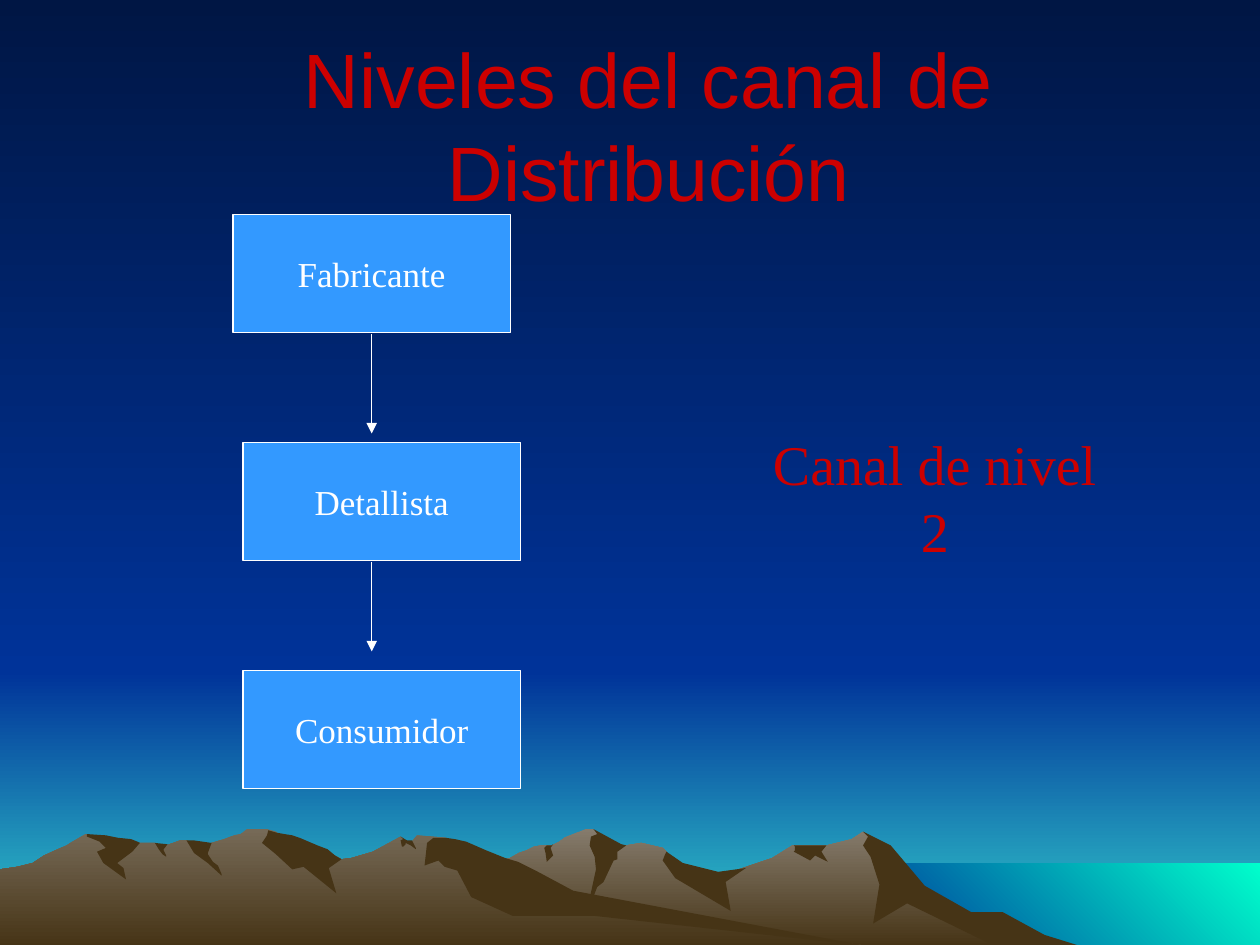
from lxml import etree
from pptx import Presentation
from pptx.dml.color import RGBColor
from pptx.enum.shapes import MSO_CONNECTOR as Connector, MSO_SHAPE as Shape
from pptx.enum.text import MSO_ANCHOR as Anchor, PP_ALIGN as Align
from pptx.oxml.ns import qn
from pptx.util import Inches, Pt

COLORS = {
    "night": "001644",
    "blue": "003399",
    "horizon": "33CCCC",
    "sea": "00FFCC",
    "far_peak": "857B6C",
    "near_peak": "766A57",
    "earth": "463416",
    "box": "3399FF",
    "white": "FFFFFF",
    "red": "CC0000",
}

FAR_RANGE = [
    (802, 82), (778, 69), (764, 65), (723, 40), (702, 13), (685, 2), (676, 8),
    (656, 13), (629, 13), (613, 23), (566, 39), (536, 32), (529, 18), (526, 15),
    (509, 11), (497, 13), (486, 15), (474, 3), (471, 0), (465, 0), (450, 6),
    (448, 7), (444, 10), (438, 13), (430, 13), (424, 14), (418, 17), (412, 19),
    (405, 23), (399, 25), (394, 27), (355, 40), (327, 51), (277, 81), (258, 93),
    (821, 93),
]
NEAR_RANGE = [
    (690, 93), (667, 90), (432, 54), (354, 7), (331, 5), (327, 10), (323, 10),
    (318, 6), (296, 18), (279, 23), (271, 24), (260, 18), (236, 23), (223, 5),
    (219, 2), (212, 0), (196, 0), (191, 4), (186, 5), (178, 8), (168, 11),
    (160, 13), (148, 9), (143, 9), (132, 13), (128, 13), (123, 11), (111, 11),
    (94, 13), (68, 4), (56, 11), (53, 13), (46, 16), (35, 21), (26, 27),
    (14, 30), (0, 32), (0, 93),
]
FAR_SHADOWS = [
    [(796, 66), (771, 66), (734, 45), (707, 13), (685, 2), (689, 6), (685, 13),
     (691, 22), (698, 44), (693, 75), (720, 59), (792, 94), (858, 93), (829, 84)],
    [(471, 0), (474, 4), (469, 6), (468, 13), (472, 22), (473, 32), (465, 69),
     (474, 46), (479, 42), (487, 25), (490, 24), (490, 18), (497, 13), (493, 12)],
    [(529, 18), (528, 20), (526, 25), (536, 39), (580, 65), (576, 42), (592, 31),
     (570, 34), (542, 27)],
    [(650, 13), (630, 13), (631, 14), (631, 17), (630, 18), (643, 25), (647, 21),
     (657, 26), (652, 18), (656, 13)],
    [(433, 19), (432, 15), (434, 13), (438, 13), (439, 12), (437, 15), (439, 21),
     (434, 26)],
]
NEAR_SHADOWS = [
    [(212, 5), (208, 11), (219, 20), (232, 32), (241, 30), (267, 51), (261, 31),
     (271, 24), (266, 21), (260, 16), (252, 13), (245, 10), (238, 7), (232, 5),
     (226, 4), (220, 3), (213, 1)],
    [(370, 10), (361, 8), (354, 7), (344, 7), (339, 11), (337, 29), (348, 25),
     (353, 30), (363, 33), (374, 54), (407, 69), (472, 69), (690, 93), (683, 92),
     (455, 49), (427, 34), (411, 26), (401, 23), (386, 17)],
    [(318, 9), (320, 8), (318, 6), (323, 9), (327, 9), (328, 11), (330, 15),
     (330, 16), (326, 13), (322, 11), (322, 12), (320, 14), (319, 14)],
    [(154, 9), (161, 10), (168, 11), (165, 19), (165, 20), (169, 26), (173, 29),
     (176, 36), (176, 37), (165, 27), (154, 19), (148, 9)],
    [(133, 12), (130, 16), (130, 17), (132, 21), (132, 22), (129, 20), (126, 16),
     (123, 11)],
    [(109, 10), (111, 11), (105, 18), (93, 27), (98, 31), (100, 40), (82, 27),
     (77, 18), (84, 15), (79, 10), (69, 6), (69, 4), (84, 5), (94, 7), (104, 8)],
]


def color(name):
    return RGBColor.from_string(COLORS[name])


def paint(fill, *names, angle=270):
    if len(names) == 1:
        fill.solid()
        fill.fore_color.rgb = color(names[0])
        return
    fill.gradient()
    fill.gradient_angle = angle
    for stop, name in zip(fill.gradient_stops, names):
        stop.color.rgb = color(name)


def add_outline(slide, left, top, points, *names, angle=270):
    builder = slide.shapes.build_freeform(*points[0], scale=Inches(0.01))
    builder.add_line_segments(points[1:], close=True)
    outline = builder.convert_to_shape(Inches(left), Inches(top))
    outline.shadow.inherit = False
    outline.line.fill.background()
    paint(outline.fill, *names, angle=angle)


def add_band(slide, left, top, width, height, *names, angle=270):
    right, bottom = round(width * 100), round(height * 100)
    corners = [(right, bottom), (0, bottom), (0, 0), (right, 0)]
    add_outline(slide, left, top, corners, *names, angle=angle)


def write(shape, text, *, size, ink, font="Times New Roman", anchor=Anchor.MIDDLE, wrap=False):
    frame = shape.text_frame
    frame.word_wrap = wrap
    frame.vertical_anchor = anchor
    paragraph = frame.paragraphs[0]
    paragraph.alignment = Align.CENTER
    run = paragraph.add_run()
    run.text = text
    run.font.size = Pt(size)
    run.font.name = font
    run.font.color.rgb = color(ink)


def add_label(slide, box, text, **style):
    write(slide.shapes.add_textbox(*map(Inches, box)), text, **style)


def add_stage(slide, box, text):
    stage = slide.shapes.add_shape(Shape.RECTANGLE, *map(Inches, box))
    stage.shadow.inherit = False
    paint(stage.fill, "box")
    stage.line.color.rgb = color("white")
    stage.line.width = Pt(0.75)
    write(stage, text, size=20, ink="white")


def add_arrow(slide, x, start, end):
    arrow = slide.shapes.add_connector(
        Connector.STRAIGHT, Inches(x), Inches(start), Inches(x), Inches(end))
    arrow.line.color.rgb = color("white")
    arrow.line.width = Pt(0.75)
    line = arrow.line._get_or_add_ln()
    etree.SubElement(line, qn("a:tailEnd"), type="triangle")
    etree.SubElement(arrow._element.spPr, qn("a:effectLst"))


def add_sky(slide, left, top, width, height):
    horizon = 5.33
    add_band(slide, left, top + horizon, width, height - horizon, "blue", "horizon")
    add_band(slide, left, top, width, horizon, "night", "blue")
    add_band(slide, left + 6.83, top + 6.85, width - 6.83, height - 6.85,
             "blue", "sea", angle=45)


def add_mountains(slide, left, top):
    ranges = [(FAR_RANGE, "far_peak", FAR_SHADOWS), (NEAR_RANGE, "near_peak", NEAR_SHADOWS)]
    for ridge, peak, shadows in ranges:
        add_outline(slide, left, top, ridge, peak, "earth")
        for shadow in shadows:
            add_outline(slide, left, top, shadow, "earth")


def add_channel(slide, left, top):
    stages = [("Fabricante", 0), ("Detallista", 0.08), ("Consumidor", 0.08)]
    for row, (name, shift) in enumerate(stages):
        add_stage(slide, (left + shift, top + 1.81 * row, 2.2, 0.94), name)
    for start, end in [(0.95, 1.74), (2.76, 3.47)]:
        add_arrow(slide, left + 1.1, top + start, top + end)


def build_slide():
    deck = Presentation()
    deck.slide_width, deck.slide_height = Inches(10), Inches(7.5)
    slide = deck.slides.add_slide(deck.slide_layouts[6])
    paint(slide.background.fill, "night", "blue")
    add_sky(slide, 0, 0, 10, 7.5)
    add_mountains(slide, 0, 6.58)
    add_label(slide, (0.9, 0.36, 8.5, 1.25), "Niveles del canal de Distribución",
              size=44, ink="red", font="Arial", wrap=True)
    add_channel(slide, 1.85, 1.7)
    add_label(slide, (5.87, 3.36, 3.1, 0.63), "Canal de nivel 2",
              size=32, ink="red", anchor=Anchor.TOP)
    deck.save("out.pptx")


if __name__ == "__main__":
    build_slide()
